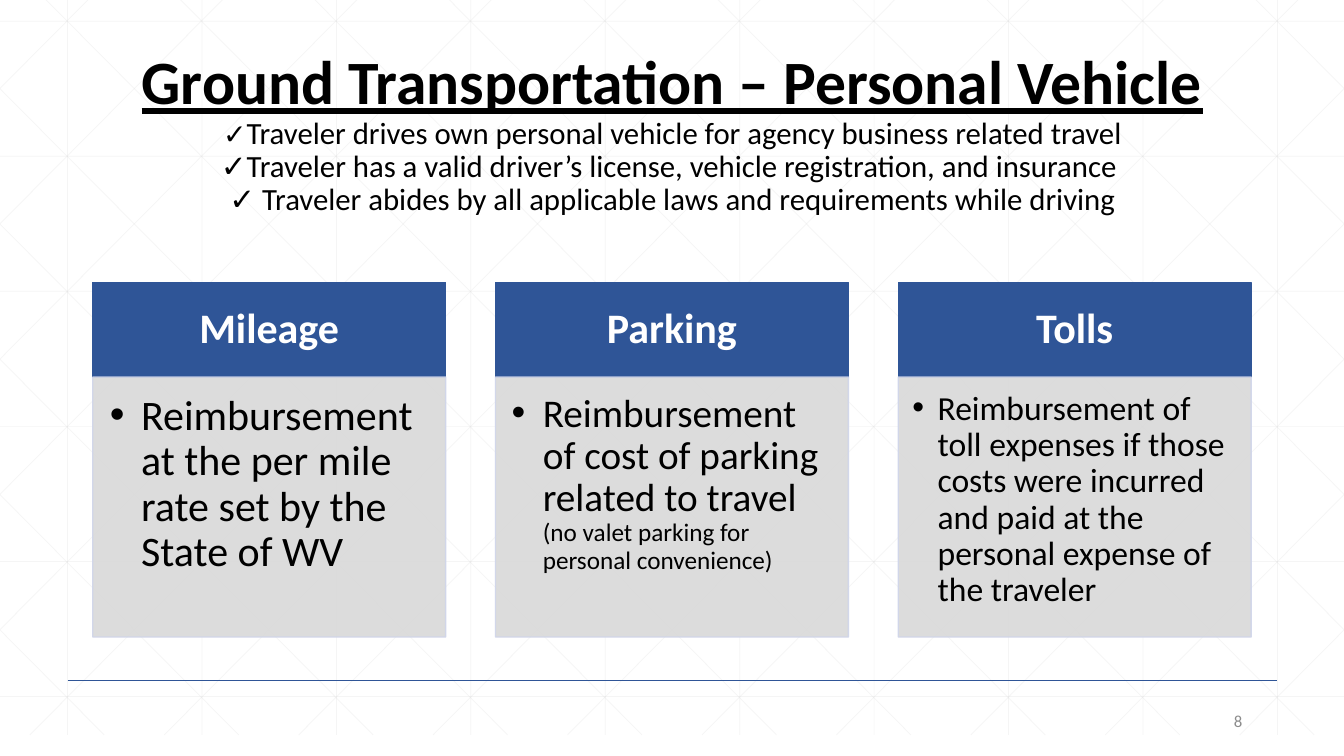
from lxml import etree
from pptx import Presentation
from pptx import util as u
from pptx.dml.color import RGBColor
from pptx.enum import shapes, text
from pptx.oxml.ns import qn

COLORS = {
    "blue": "2F5597", "grey": "D9D9D9", "edge": "CFD5EA",
    "black": "000000", "white": "FFFFFF", "number": "8C8C8C",
}
WIDTH, HEIGHT = 13.33, 7.5
GRID_TOP, GRID_BOTTOM = -0.21, 7.29
GRID_STEP = 4 / 3
DIAGONAL_RUN = 7.45
CARD_LEFT, CARD_PITCH, CARD_WIDTH = 0.92, 3.995, 3.5
HEADER_TOP, HEADER_HEIGHT, BODY_HEIGHT = 2.8, 0.94, 2.58

TITLE = {"size": 44, "bold": True, "underline": True}
POINT = {"size": 22}
HEADER = {"size": 30, "bold": True, "color": "white"}

TITLE_LINES = [
    [("Ground Transportation – Personal Vehicle", TITLE)],
    [("✓", {"size": 20}),
     ("Traveler drives own personal vehicle for agency business related travel", POINT)],
    [("✓Traveler has a valid driver’s license, vehicle registration, and insurance ", POINT)],
    [("✓ Traveler abides by all applicable laws and requirements while driving", POINT)],
]
CARDS = [
    ("Mileage", [("Reimbursement  at the per mile rate set by the State of WV", {"size": 30})],
     (0.17, 0.17, 0.23, 0.26), 0.31),
    ("Parking", [("Reimbursement of cost of parking related to travel ", {"size": 28}),
                 ("(no valet parking for personal convenience)", {"size": 18})],
     (0.16, 0.16, 0.22, 0.24), 0.31),
    ("Tolls", [("Reimbursement of toll expenses if those costs were incurred "
                "and paid at the personal expense of the traveler", {"size": 24})],
     (0.14, 0.14, 0.19, 0.21), 0.25),
]


class SlideBuilder:
    font = "Calibri"

    def __init__(self, presentation):
        self.slide = presentation.slides.add_slide(presentation.slide_layouts[6])

    def paint(self, fill, color):
        fill.solid()
        fill.fore_color.rgb = RGBColor.from_string(COLORS[color])

    def fade(self, shape, alpha):
        if alpha < 100:
            for color in shape._element.spPr.iter(qn("a:srgbClr")):
                etree.SubElement(color, qn("a:alpha"), val=str(alpha * 1000))

    def line(self, start, end, color="grey", width=0.5, alpha=25):
        connector = self.slide.shapes.add_connector(
            shapes.MSO_CONNECTOR.STRAIGHT, *map(u.Inches, start + end))
        connector.line.width = u.Pt(width)
        self.paint(connector.line.fill, color)
        self.fade(connector, alpha)
        etree.SubElement(connector._element.spPr, qn("a:effectLst"))

    def box(self, left, top, width, height, fill, edge, alpha=100):
        shape = self.slide.shapes.add_shape(
            shapes.MSO_SHAPE.RECTANGLE, *map(u.Inches, (left, top, width, height)))
        shape.shadow.inherit = False
        shape.line.width = u.Pt(1)
        self.paint(shape.fill, fill)
        self.paint(shape.line.fill, edge)
        self.fade(shape, alpha)
        return shape

    def text_box(self, left, top, width, height):
        return self.slide.shapes.add_textbox(*map(u.Inches, (left, top, width, height)))

    def fill_text(self, shape, lines, align="CENTER", anchor="MIDDLE",
                  insets=(0.1, 0.05, 0.1, 0.05), spacing=0.9):
        frame = shape.text_frame
        left, top, right, bottom = map(u.Inches, insets)
        settings = {
            "word_wrap": True, "vertical_anchor": text.MSO_ANCHOR[anchor],
            "margin_left": left, "margin_top": top,
            "margin_right": right, "margin_bottom": bottom,
        }
        for name, value in settings.items():
            setattr(frame, name, value)
        paragraph = frame.paragraphs[0]
        paragraph.alignment = text.PP_ALIGN[align]
        paragraph.line_spacing = spacing
        for index, pieces in enumerate(lines):
            if index:
                paragraph.add_line_break()
            for words, style in pieces:
                self.add_words(paragraph, words, style)
        return paragraph

    def add_words(self, paragraph, words, style):
        run = paragraph.add_run()
        run.text = words
        values = {"name": self.font, "bold": False, **style}
        color = values.pop("color", "black")
        values["size"] = u.Pt(values["size"])
        for name, value in values.items():
            setattr(run.font, name, value)
        run.font.color.rgb = RGBColor.from_string(COLORS[color])

    def bullet(self, paragraph, indent):
        properties = paragraph._p.get_or_add_pPr()
        properties.set("marL", str(u.Inches(indent)))
        properties.set("indent", str(-u.Inches(indent)))
        etree.SubElement(properties, qn("a:buFont"), typeface="Arial")
        etree.SubElement(properties, qn("a:buChar"), char="•")

    def grid(self):
        for column in range(10):
            x = 0.67 + column * GRID_STEP
            self.line((x, GRID_TOP), (x, GRID_BOTTOM))
        for row in range(6):
            y = 0.21 + row * 1.34
            self.line((0, y), (WIDTH, y))
        slope = (GRID_BOTTOM - GRID_TOP) / DIAGONAL_RUN
        for step in range(-5, 10):
            origin = 0.25 + step * GRID_STEP
            x1, x2 = max(origin, 0), min(origin + DIAGONAL_RUN, WIDTH)
            y1, y2 = (GRID_TOP + (x - origin) * slope for x in (x1, x2))
            self.line((x1, y1), (x2, y2))
            self.line((WIDTH - x1, y1), (WIDTH - x2, y2))

    def card(self, left, heading, body, insets, indent):
        header = self.box(left, HEADER_TOP, CARD_WIDTH, HEADER_HEIGHT, "blue", "blue")
        self.fill_text(header, [[(heading, HEADER)]], insets=(0.23, 0.13, 0.23, 0.13))
        panel = self.box(left, HEADER_TOP + HEADER_HEIGHT, CARD_WIDTH, BODY_HEIGHT,
                         "grey", "edge", 90)
        self.bullet(self.fill_text(panel, [body], "LEFT", "TOP", insets), indent)


def main():
    presentation = Presentation()
    presentation.slide_width = u.Inches(WIDTH)
    presentation.slide_height = u.Inches(HEIGHT)
    builder = SlideBuilder(presentation)
    builder.grid()
    builder.line((0.67, 6.75), (12.67, 6.75), "blue", 1, 100)
    builder.fill_text(builder.text_box(0.92, 0.43, 11.5, 2.16), TITLE_LINES,
                      anchor="TOP", insets=(0.1, 0.08, 0.1, 0.05))
    for index, card in enumerate(CARDS):
        builder.card(CARD_LEFT + index * CARD_PITCH, *card)
    builder.fill_text(builder.text_box(9.42, 6.95, 3, 0.4),
                      [[("8", {"size": 12, "color": "number"})]], "RIGHT", spacing=1.0)
    presentation.save("out.pptx")


if __name__ == "__main__":
    main()
